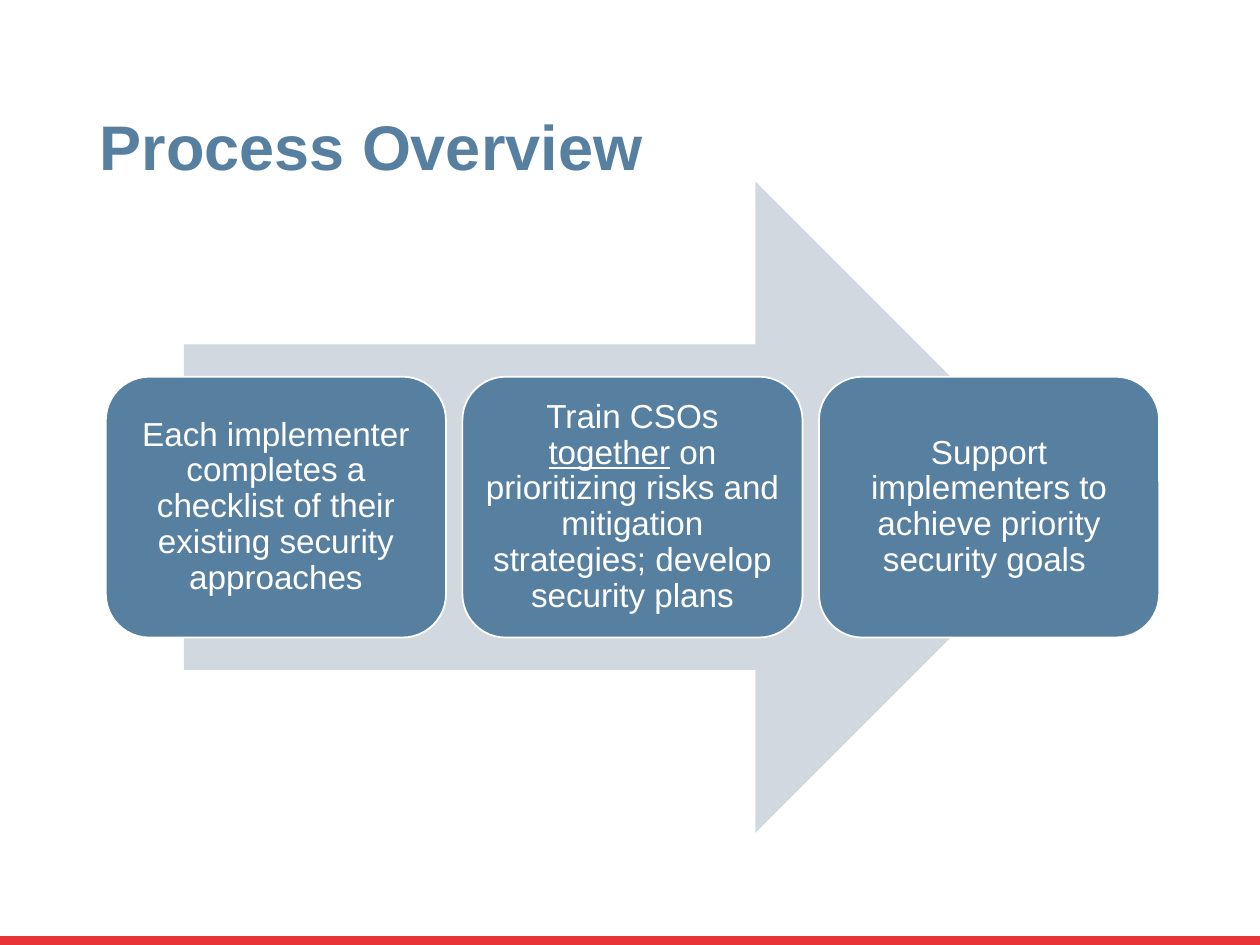
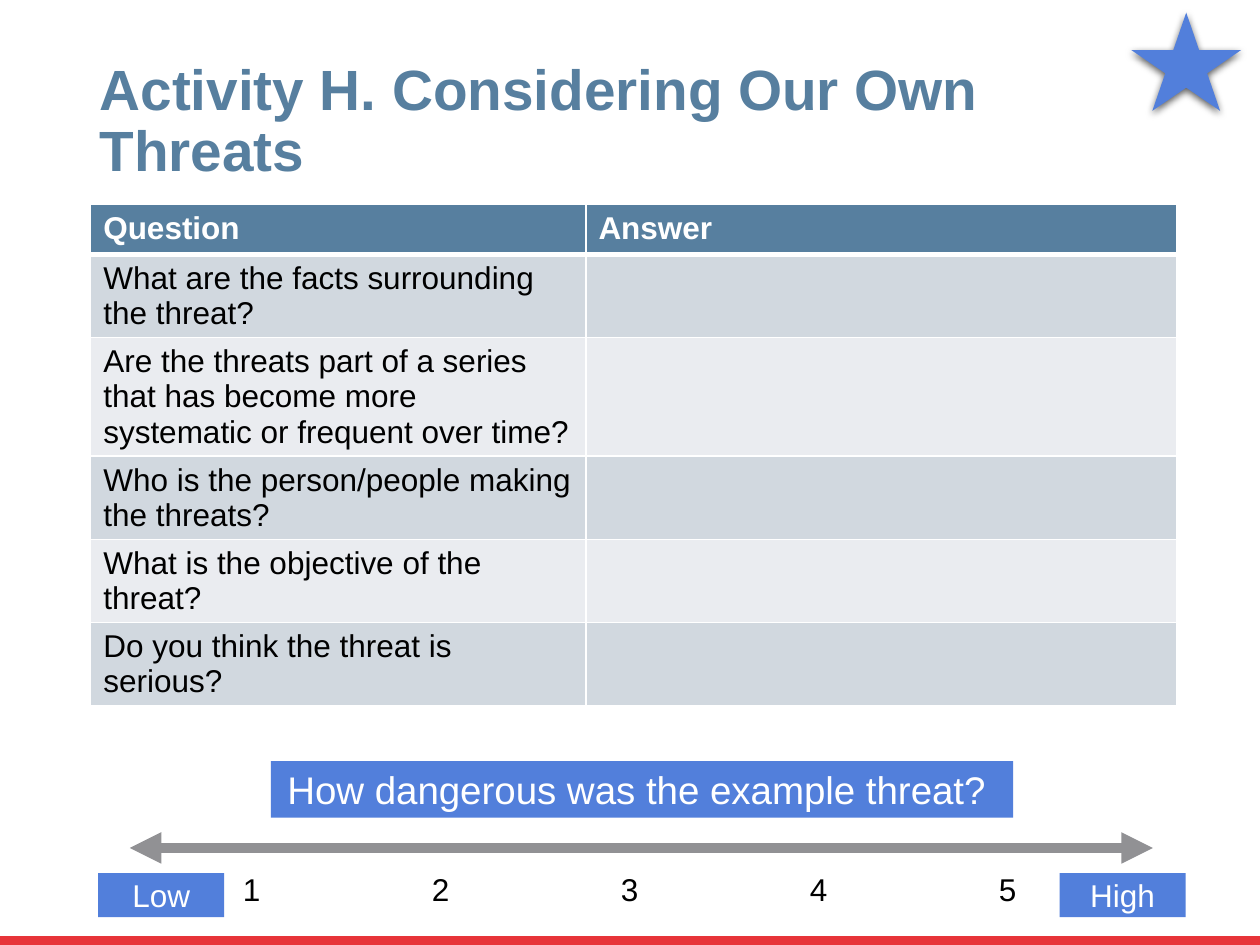
"""Build the process overview and threat activity slides."""
import lxml.etree
import pptx
import pptx.dml.color
import pptx.enum.shapes
import pptx.enum.text
import pptx.oxml.ns
import pptx.util

Inches = pptx.util.Inches
Pt = pptx.util.Pt
RGBColor = pptx.dml.color.RGBColor
SHAPE = pptx.enum.shapes.MSO_SHAPE
ALIGN = pptx.enum.text.PP_ALIGN
ANCHOR = pptx.enum.text.MSO_ANCHOR
qn = pptx.oxml.ns.qn

FONT = "Arial"
STEEL = RGBColor(0x57, 0x7F, 0x9F)
PALE = RGBColor(0xD1, 0xD8, 0xDF)
PALER = RGBColor(0xEA, 0xEC, 0xF0)
BLUE = RGBColor(0x52, 0x7F, 0xDB)
RED = RGBColor(0xE7, 0x34, 0x39)
GREY = RGBColor(0x91, 0x91, 0x94)
WHITE = RGBColor(0xFF, 0xFF, 0xFF)
BLACK = RGBColor(0, 0, 0)

STEPS = [
    [("Each implementer completes a checklist of their existing security approaches", False)],
    [("Train CSOs ", False), ("together", True),
     (" on prioritizing risks and mitigation strategies; develop security plans", False)],
    [("Support implementers to achieve priority security goals ", False)],
]
QUESTIONS = [
    "What are the facts surrounding the threat?",
    "Are the threats part of a series that has become more systematic or frequent over time?",
    "Who is the person/people making the threats?",
    "What is the objective of the threat?",
    "Do you think the threat is serious?",
]


def sub(parent, tag, **attrs):
    """Append a drawing element with the given attributes."""
    return lxml.etree.SubElement(parent, qn(tag), {k: str(v) for k, v in attrs.items()})


def write(tf, text, size=18, color=WHITE, bold=False, align=None, anchor=None,
          spacing=None, inset=None, tabs=()):
    """Write text, or (text, underline) pairs, as one formatted paragraph."""
    tf.word_wrap = True
    tf.auto_size = pptx.enum.text.MSO_AUTO_SIZE.NONE
    if anchor is not None:
        tf.vertical_anchor = anchor
    if inset is not None:
        tf.margin_left = tf.margin_right = tf.margin_top = tf.margin_bottom = Inches(inset)
    p = tf.paragraphs[0]
    p.alignment = align
    p.line_spacing = spacing
    if tabs:
        tab_list = sub(p._p.get_or_add_pPr(), "a:tabLst")
        for pos in tabs:
            sub(tab_list, "a:tab", pos=Inches(pos), algn="l")
    for part, underline in [(text, False)] if isinstance(text, str) else text:
        r = p.add_run()
        r.text = part
        r.font.name = FONT
        r.font.size = Pt(size)
        r.font.bold = bold
        r.font.underline = underline or None
        r.font.color.rgb = color


def add_shape(s, kind, box, fill, line=None):
    """Add a flat filled preset shape."""
    sp = s.shapes.add_shape(kind, *map(Inches, box))
    sp.shadow.inherit = False
    sp.fill.solid()
    sp.fill.fore_color.rgb = fill
    if line is None:
        sp.line.fill.background()
    else:
        sp.line.color.rgb = line
        sp.line.width = Pt(1)
    return sp


def add_label(s, text, box, size=18):
    """Add a blue rectangle with centred white text."""
    sp = add_shape(s, SHAPE.RECTANGLE, box, BLUE)
    write(sp.text_frame, text, size, align=ALIGN.CENTER, anchor=ANCHOR.MIDDLE)


def new_slide(prs, title, size):
    """Add a slide with the shared bottom band and title style."""
    s = prs.slides.add_slide(prs.slide_layouts[5])
    add_shape(s, SHAPE.RECTANGLE, (0, 7.43, 10, 0.07), RED)
    t = s.shapes.title
    t.left, t.top, t.width, t.height = map(Inches, (0.69, 0.64, 8.62, 0.87))
    write(t.text_frame, title, size, STEEL, bold=True, align=ALIGN.LEFT,
          anchor=ANCHOR.BOTTOM, spacing=0.9)
    return s


def add_steps(s):
    """Add the row of rounded process steps."""
    for i, text in enumerate(STEPS):
        sp = add_shape(s, SHAPE.ROUNDED_RECTANGLE, (0.84 + i * 2.83, 2.99, 2.7, 2.07),
                       STEEL, WHITE)
        write(sp.text_frame, text, 19, align=ALIGN.CENTER, anchor=ANCHOR.MIDDLE,
              spacing=0.9, inset=0.08)


def border_cell(cell, bottom):
    """Give a cell white borders with its own bottom width."""
    tc_pr = cell._tc.get_or_add_tcPr()
    for side, width in (("L", 1), ("R", 1), ("T", 1), ("B", bottom)):
        ln = sub(tc_pr, f"a:ln{side}", w=Pt(width))
        sub(sub(ln, "a:solidFill"), "a:srgbClr", val=WHITE)


def add_question_table(s):
    """Add the table of questions with an empty answer column."""
    rows = [("Question", "Answer")] + [(q, "") for q in QUESTIONS]
    heights = [0.4, 0.66, 0.94, 0.66, 0.66, 0.65]
    frame = s.shapes.add_table(len(rows), 2, Inches(0.72), Inches(1.62),
                               Inches(8.62), Inches(sum(heights)))
    table = frame.table
    for column, width in zip(table.columns, (3.93, 4.69)):
        column.width = Inches(width)
    for i, (row, height) in enumerate(zip(rows, heights)):
        table.rows[i].height = Inches(height)
        header = i == 0
        for j, text in enumerate(row):
            cell = table.cell(i, j)
            border_cell(cell, 3 if header else 1)
            cell.fill.solid()
            cell.fill.fore_color.rgb = STEEL if header else (PALER, PALE)[i % 2]
            if text:
                write(cell.text_frame, text, color=WHITE if header else BLACK, bold=header)


def add_double_arrow(s, x1, x2, y):
    """Add a thick horizontal line with an arrowhead at each end."""
    c = s.shapes.add_connector(pptx.enum.shapes.MSO_CONNECTOR.STRAIGHT,
                               Inches(x1), Inches(y), Inches(x2), Inches(y))
    c.line.color.rgb = GREY
    c.line.width = Pt(6)
    ln = c.line._get_or_add_ln()
    sub(ln, "a:headEnd", type="triangle")
    sub(ln, "a:tailEnd", type="triangle")
    sub(c._element.spPr, "a:effectLst")


def add_scale(s):
    """Add the danger scale from low to high."""
    add_double_arrow(s, 1.03, 9.15, 6.73)
    add_label(s, "High", (8.41, 6.93, 1, 0.35))
    add_label(s, "Low", (0.78, 6.93, 1, 0.35))
    add_label(s, "How dangerous was the example threat? ", (2.15, 6.04, 5.89, 0.45), 22)
    tb = s.shapes.add_textbox(*map(Inches, (1.83, 6.86, 6.45, 0.4)))
    write(tb.text_frame, "\t".join("12345"), color=BLACK,
          tabs=[1.5 * i for i in range(1, 5)])


def add_star(s):
    """Add the corner star with a soft shadow below it."""
    sp = add_shape(s, SHAPE.STAR_5_POINT, (8.98, 0.1, 0.87, 0.78), BLUE)
    effects = sp._element.spPr.find(qn("a:effectLst"))
    shadow = sub(effects, "a:outerShdw", blurRad=Pt(4.5), dist=Pt(1.5),
                 dir=90 * 60000, rotWithShape=0)
    sub(sub(shadow, "a:srgbClr", val=BLACK), "a:alpha", val=63000)


def main():
    """Build and save both slides."""
    prs = pptx.Presentation()
    prs.slide_width, prs.slide_height = Inches(10), Inches(7.5)

    s = new_slide(prs, "Process Overview", 36)
    add_shape(s, SHAPE.RIGHT_ARROW, (1.46, 1.44, 7.12, 5.17), PALE)
    add_steps(s)

    s = new_slide(prs, "Activity H. Considering Our Own Threats", 32.4)
    add_question_table(s)
    add_scale(s)
    add_star(s)

    prs.save("out.pptx")


if __name__ == "__main__":
    main()
